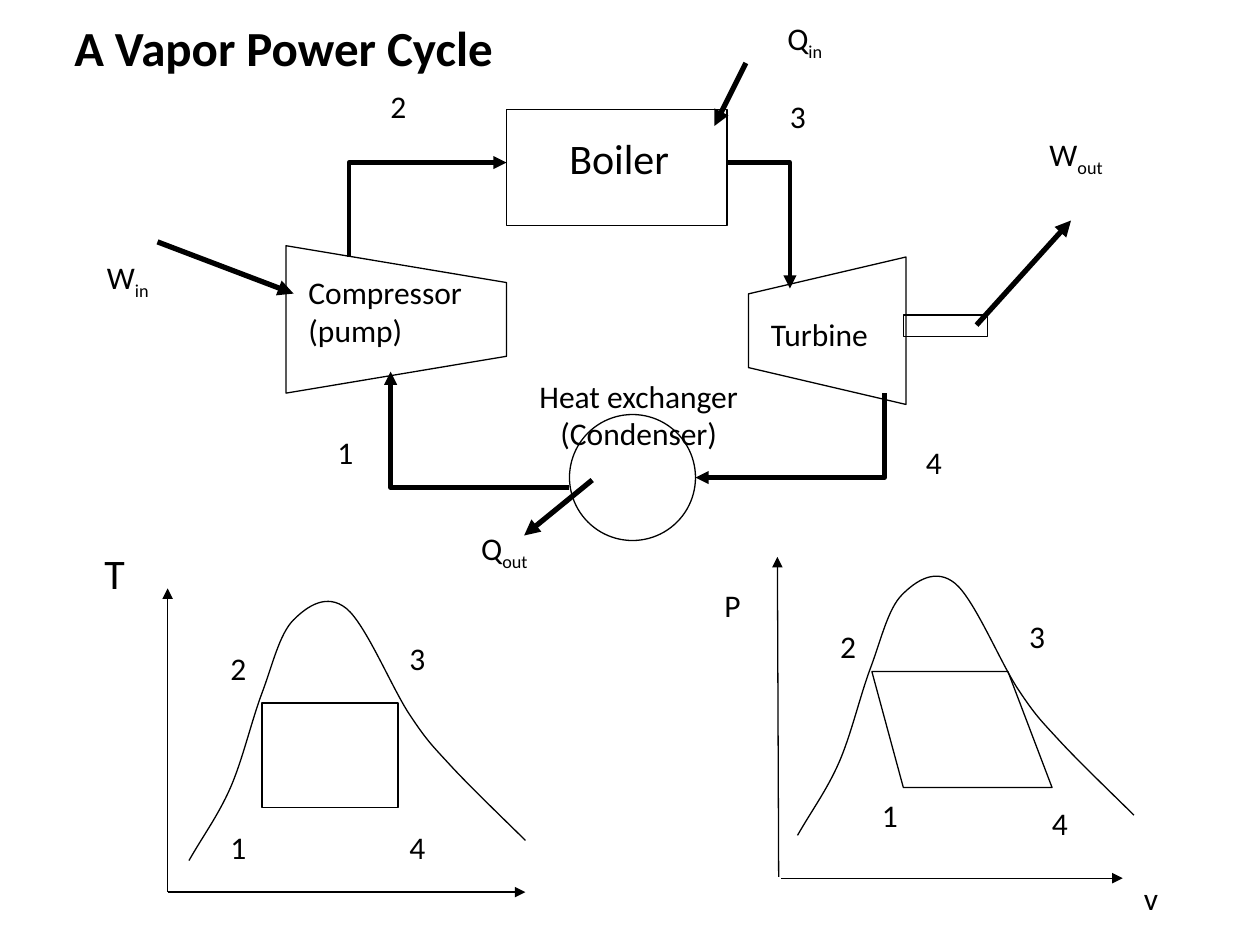
from dataclasses import dataclass

from lxml import etree
from pptx import Presentation
from pptx.dml.color import RGBColor
from pptx.enum.shapes import MSO_CONNECTOR as Connector, MSO_SHAPE as Preset
from pptx.enum.text import MSO_ANCHOR as Anchor, MSO_AUTO_SIZE as AutoSize, PP_ALIGN as Align
from pptx.oxml.ns import qn
from pptx.shapes.shapetree import GroupShapes
from pptx.text.text import _Run as Run
from pptx.util import Inches, Pt

Point = tuple[float, float]


@dataclass(frozen=True)
class Theme:
    ink: RGBColor = RGBColor(0, 0, 0)
    font: str = "Calibri"
    title: float = 28
    large: float = 24
    label: float = 18
    thin: float = 0.75
    pipe: float = 2.5
    energy: float = 3


THEME = Theme()


@dataclass(frozen=True)
class Label:
    text: str
    left: float
    top: float
    width: float = 0.34
    height: float = 0.43
    size: float = THEME.label
    subscript: str = ""
    align: Align = Align.LEFT


@dataclass(frozen=True)
class Arrow:
    start: Point
    end: Point
    weight: float = THEME.thin


@dataclass(frozen=True)
class Outline:
    preset: Preset
    left: float
    top: float
    width: float
    height: float


@dataclass(frozen=True)
class Path:
    points: tuple[Point, ...]
    closed: bool = False
    curved: bool = False
    weight: float = THEME.thin
    arrow: bool = False
    rotation: float = 0


def style_run(run: Run, size: float, bold: bool = False) -> None:
    run.font.name = THEME.font
    run.font.size = Pt(size)
    run.font.bold = bold
    run.font.color.rgb = THEME.ink


def style_line(shape, weight: float, arrow: bool = False) -> None:
    shape.line.color.rgb = THEME.ink
    shape.line.width = Pt(weight)
    if arrow:
        etree.SubElement(shape.line._get_or_add_ln(), qn("a:tailEnd"), type="triangle")


def draw_label(canvas: GroupShapes, label: Label) -> None:
    box = canvas.add_textbox(
        Inches(label.left), Inches(label.top), Inches(label.width), Inches(label.height)
    )
    frame = box.text_frame
    frame.word_wrap = False
    frame.auto_size = AutoSize.SHAPE_TO_FIT_TEXT
    for index, line in enumerate(label.text.split("\n")):
        paragraph = frame.add_paragraph() if index else frame.paragraphs[0]
        paragraph.alignment = label.align
        run = paragraph.add_run()
        run.text = line
        style_run(run, label.size)
    if label.subscript:
        run = paragraph.add_run()
        run.text = label.subscript
        style_run(run, label.size)
        run.font._element.set("baseline", "-25000")


def draw_arrow(canvas: GroupShapes, arrow: Arrow) -> None:
    ends = [Inches(value) for value in arrow.start + arrow.end]
    connector = canvas.add_connector(Connector.STRAIGHT, *ends)
    style_line(connector, arrow.weight, arrow=True)
    etree.SubElement(connector._element.spPr, qn("a:effectLst"))


def draw_outline(canvas: GroupShapes, outline: Outline) -> None:
    shape = canvas.add_shape(
        outline.preset,
        Inches(outline.left), Inches(outline.top), Inches(outline.width), Inches(outline.height),
    )
    shape.shadow.inherit = False
    shape.fill.background()
    style_line(shape, THEME.thin)


def bend_segments(shape) -> None:
    segments = list(shape._element.iter(qn("a:lnTo")))
    for first in range(0, len(segments), 3):
        curve = etree.Element(qn("a:cubicBezTo"))
        segments[first].addprevious(curve)
        for segment in segments[first:first + 3]:
            curve.append(segment[0])
            segment.getparent().remove(segment)


def draw_path(canvas: GroupShapes, path: Path) -> None:
    start, *rest = [(Inches(x), Inches(y)) for x, y in path.points]
    builder = canvas.build_freeform(*start)
    builder.add_line_segments(rest, close=path.closed)
    shape = builder.convert_to_shape()
    if path.curved:
        bend_segments(shape)
    shape.rotation = path.rotation
    shape.shadow.inherit = False
    shape.fill.background()
    style_line(shape, path.weight, path.arrow)


DOME = ((1.5, 6.83), (1.83, 6.25), (2.08, 5.5), (2.33, 4.92),
        (2.75, 4.83), (3.25, 5.67), (3.58, 6.08), (4.17, 6.67))


def dome(dx: float = 0, dy: float = 0) -> Path:
    knots = [(x + dx, y + dy) for x, y in DOME]
    lead_in = tuple(2 * a - b for a, b in zip(knots[0], knots[1]))
    padded = [lead_in, *knots, knots[-1]]
    points = [knots[0]]
    for before, start, end, after in zip(padded, padded[1:], padded[2:], padded[3:]):
        points += [
            tuple(s + (e - b) / 6 for b, s, e in zip(before, start, end)),
            tuple(e - (a - s) / 6 for s, e, a in zip(start, end, after)),
            end,
        ]
    return Path(tuple(points), curved=True)


def funnel(left: float, top: float, width: float, height: float, rotation: float) -> Path:
    right, bottom, inset = left + width, top + height, width / 4
    corners = ((left, top), (left + inset, bottom), (right - inset, bottom), (right, top))
    return Path(corners, closed=True, rotation=rotation)


def states(*corners: Point) -> tuple[Label, ...]:
    return tuple(Label(str(number), *corner) for number, corner in enumerate(corners, 1))


def pipe(*points: Point) -> Path:
    return Path(points, weight=THEME.pipe, arrow=True)


TEMPERATURE_DIAGRAM = (
    Arrow((1.33, 7.08), (1.33, 4.67)),
    Arrow((1.33, 7.08), (4.17, 7.08)),
    Label("T", 0.73, 4.3, 0.4, 0.5, THEME.large),
    dome(),
    Outline(Preset.RECTANGLE, 2.08, 5.58, 1.08, 0.83),
    *states((1.73, 6.52), (1.73, 5.1), (3.15, 5.02), (3.15, 6.52)),
)

PRESSURE_DIAGRAM = (
    Arrow((6.18, 6.96), (6.17, 4.42)),
    Arrow((6.2, 6.97), (8.91, 6.97)),
    Label("P", 5.65, 4.6, 0.36),
    Label("v", 8.98, 6.93),
    dome(4.83, -0.2),
    Path(((6.92, 5.33), (8, 5.33), (8.35, 6.25), (7.17, 6.25)), closed=True),
    *states((6.9, 6.27), (6.57, 4.93), (8.07, 4.85), (8.25, 6.33)),
)

CYCLE = (
    Outline(Preset.RECTANGLE, 4.02, 0.87, 1.75, 0.92),
    Outline(Preset.OVAL, 4.52, 3.29, 1, 1),
    funnel(5.98, 2, 1.17, 1.25, 90),
    funnel(2.56, 1.66, 1.17, 1.75, 270),
    pipe((5.77, 1.29), (6.27, 1.29), (6.27, 2.29)),
    pipe((7.02, 3.12), (7.02, 3.79), (5.52, 3.79)),
    pipe((4.52, 3.87), (3.1, 3.87), (3.1, 2.95)),
    pipe((2.77, 2.04), (2.77, 1.29), (4.02, 1.29)),
    Label("Boiler", 4.42, 1, 1.03, 0.5, THEME.large),
    Label("Turbine", 6.02, 2.45, 1.08),
    Label("Compressor\n(pump)", 2.35, 2.12, 1.54, 0.77),
    Label("Heat exchanger\n(Condenser)", 4.1, 2.94, 1.94, 0.77, align=Align.CENTER),
    *states((2.58, 3.39), (3, 0.64), (6.17, 0.72), (7.25, 3.47)),
    Arrow((4.7, 3.81), (4.16, 4.25), THEME.energy),
    Label("Q", 3.72, 4.15, 0.63, subscript="out"),
    Arrow((5.92, 0.5), (5.67, 1), THEME.energy),
    Label("Q", 6.15, 0.1, 0.54, subscript="in"),
    Outline(Preset.RECTANGLE, 7.17, 2.5, 0.67, 0.17),
    Arrow((7.75, 2.58), (8.5, 1.75), THEME.energy),
    Label("W", 8.23, 1.02, 0.69, subscript="out"),
    Arrow((1.25, 1.92), (2.33, 2.33), THEME.energy),
    Label("W", 0.75, 2, 0.6, subscript="in"),
)

DRAW = {Label: draw_label, Arrow: draw_arrow, Outline: draw_outline, Path: draw_path}

deck = Presentation()
deck.slide_width, deck.slide_height = Inches(10), Inches(7.5)
slide = deck.slides.add_slide(deck.slide_layouts[5])

heading = slide.shapes.title
heading.left, heading.top = Inches(0.25), Inches(0)
heading.width, heading.height = Inches(4), Inches(0.75)
heading.text_frame.vertical_anchor = Anchor.MIDDLE
heading_line = heading.text_frame.paragraphs[0]
heading_line.alignment = Align.CENTER
heading_run = heading_line.add_run()
heading_run.text = "A Vapor Power Cycle"
style_run(heading_run, THEME.title, bold=True)

for diagram in (TEMPERATURE_DIAGRAM, PRESSURE_DIAGRAM, CYCLE):
    canvas = slide.shapes.add_group_shape().shapes
    for part in diagram:
        DRAW[type(part)](canvas, part)

deck.save("out.pptx")
